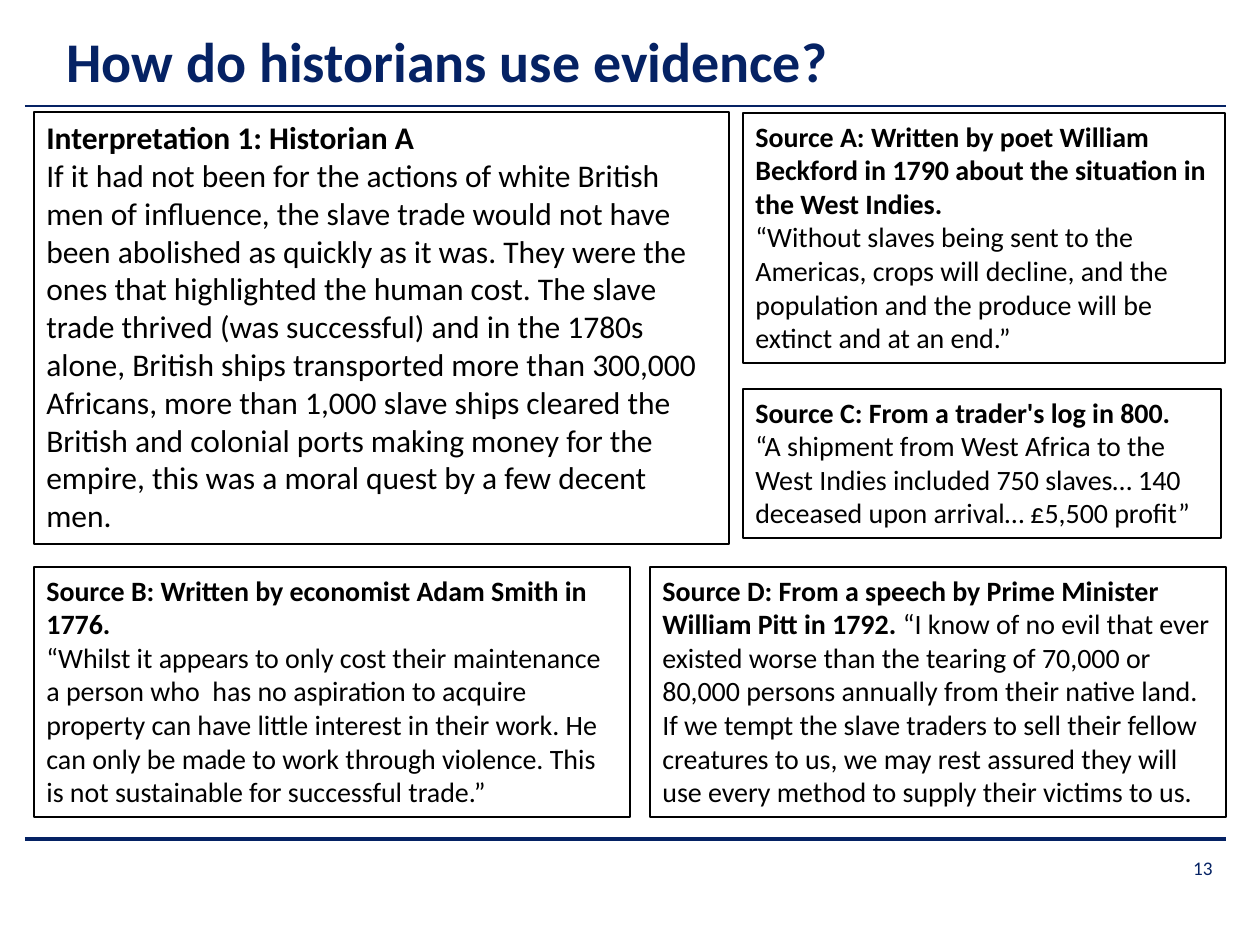
"""Build a slide that sets a historian's interpretation beside four sources."""
import pptx
import pptx.util
import pptx.dml.color
import pptx.enum.shapes
import pptx.enum.text
import pptx.oxml.ns
import lxml.etree

NAVY = pptx.dml.color.RGBColor(0x05, 0x22, 0x64)
BLACK = pptx.dml.color.RGBColor(0, 0, 0)
FONT = "Calibri"
PX_PER_INCH = 126
ALIGN = pptx.enum.text.PP_ALIGN
ANCHOR = pptx.enum.text.MSO_ANCHOR

TITLE = "How do historians use evidence?"
TITLE_AREA = (54, 26, 1142, 69)
PAGE_NUMBER = "13"
PAGE_NUMBER_AREA = (931, 843, 294, 50)
RULE_LEFT, RULE_RIGHT = 25, 1226
RULES = [(106, 1.5), (839, 1.75)]

EXTRACTS = [
    ((34, 112, 695, 432), 18, [
        [("Interpretation 1: Historian A", True)],
        [("If it had not been for the actions of white British men of influence, "
          "the slave trade would not have been abolished as quickly as it was. "
          "They were the ones that highlighted the human cost. The slave trade "
          "thrived (was successful) and in the 1780s alone, British ships "
          "transported more than 300,000 Africans, more than 1,000 slave ships "
          "cleared the British and colonial ports making money for the empire, "
          "this was a moral quest by a few decent men.", False)]]),
    ((743, 113, 482, 250), 16, [
        [("Source A: Written by poet William Beckford in 1790 about the "
          "situation in the West Indies.", True)],
        [("“Without slaves being sent to the Americas, crops will decline, and "
          "the population and the produce will be extinct and at an end.”", False)]]),
    ((34, 567, 596, 250), 16, [
        [("Source B: Written by economist Adam Smith in 1776.", True)],
        [("“Whilst it appears to only cost their maintenance a person who  has "
          "no aspiration to acquire property can have little interest in their "
          "work. He can only be made to work through violence. This is not "
          "sustainable for successful trade.”", False)]]),
    ((650, 567, 576, 250), 16, [
        [("Source D: From a speech by Prime Minister William Pitt in 1792. ", True),
         ("“I know of no evil that ever existed worse than the tearing of 70,000 "
          "or 80,000 persons annually from their native land. If we tempt the "
          "slave traders to sell their fellow creatures to us, we may rest "
          "assured they will use every method to supply their victims to us.",
          False)]]),
    ((743, 389, 478, 149), 16, [
        [("Source C: From a trader's log in 800.", True)],
        [("“A shipment from West Africa to the West Indies included 750 slaves… "
          "140 deceased upon arrival… £5,500 profit”", False)]]),
]


def px(length):
    return pptx.util.Emu(round(length * 914400 / PX_PER_INCH))


def write(frame, paragraphs, size, color=BLACK, align=ALIGN.LEFT, anchor=ANCHOR.TOP):
    frame.word_wrap = True
    frame.auto_size = pptx.enum.text.MSO_AUTO_SIZE.NONE
    frame.vertical_anchor = anchor
    for index, runs in enumerate(paragraphs):
        paragraph = frame.add_paragraph() if index else frame.paragraphs[0]
        paragraph.alignment = align
        for words, bold in runs:
            run = paragraph.add_run()
            run.text = words
            run.font.name = FONT
            run.font.size = pptx.util.Pt(size)
            run.font.bold = bold
            run.font.color.rgb = color


def add_rule(slide, y, weight):
    rule = slide.shapes.add_connector(
        pptx.enum.shapes.MSO_CONNECTOR.STRAIGHT,
        px(RULE_LEFT), px(y), px(RULE_RIGHT), px(y))
    rule.line.color.rgb = NAVY
    rule.line.width = pptx.util.Pt(weight)
    lxml.etree.SubElement(rule._element.spPr, pptx.oxml.ns.qn("a:effectLst"))


def add_extract(slide, area, size, paragraphs):
    extract = slide.shapes.add_shape(
        pptx.enum.shapes.MSO_SHAPE.RECTANGLE, *map(px, area))
    extract.shadow.inherit = False
    extract.fill.background()
    extract.line.color.rgb = BLACK
    extract.line.width = pptx.util.Pt(0.75)
    write(extract.text_frame, paragraphs, size)


def main():
    deck = pptx.Presentation()
    deck.slide_width = pptx.util.Inches(10)
    deck.slide_height = pptx.util.Inches(7.5)
    slide = deck.slides.add_slide(deck.slide_layouts[5])

    for y, weight in RULES:
        add_rule(slide, y, weight)

    page_number = slide.shapes.add_textbox(*map(px, PAGE_NUMBER_AREA))
    write(page_number.text_frame, [[(PAGE_NUMBER, False)]], 11, color=NAVY,
          align=ALIGN.RIGHT, anchor=ANCHOR.MIDDLE)

    title = slide.shapes.title
    title.left, title.top, title.width, title.height = map(px, TITLE_AREA)
    write(title.text_frame, [[(TITLE, True)]], 32, color=NAVY, anchor=ANCHOR.MIDDLE)

    for area, size, paragraphs in EXTRACTS:
        add_extract(slide, area, size, paragraphs)

    deck.save("out.pptx")


if __name__ == "__main__":
    main()
